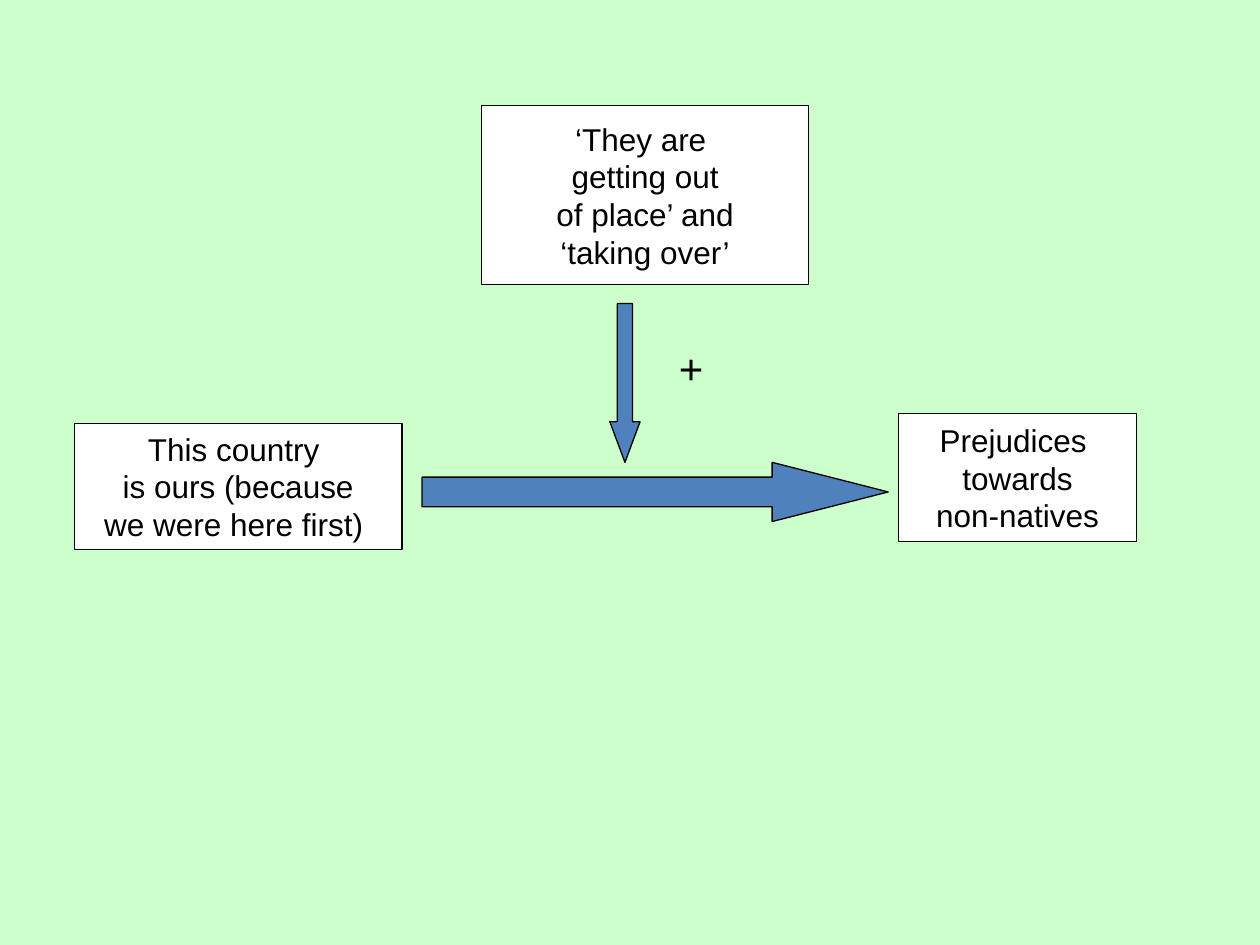
from dataclasses import dataclass

from pptx import Presentation
from pptx import util as u
from pptx.dml.color import RGBColor
from pptx.enum import shapes as sh, text as tx

WIDE, HIGH = u.Inches(10), u.Inches(7.5)
HUES = {"back": "CCFFCC", "box": "FFFFFF", "arrow": "4F81BD", "ink": "000000"}


@dataclass
class Area:
    """Place and size in percent of the slide's width and height."""
    left: float
    top: float
    width: float
    height: float

    def emu(self) -> list[int]:
        pairs = ((self.left, WIDE), (self.top, HIGH),
                 (self.width, WIDE), (self.height, HIGH))
        return [round(part * full / 100) for part, full in pairs]


@dataclass
class Box:
    area: Area
    lines: list[str]


@dataclass
class Arrow:
    area: Area
    kind: sh.MSO_SHAPE
    head: float  # head length as a share of the arrow's thickness


BOXES = [
    Box(Area(5.9, 44.8, 26, 13.33),
        ["This country ", "is ours (because", "we were here first) "]),
    Box(Area(71.3, 43.73, 18.9, 13.6),
        ["Prejudices ", "towards", "non-natives"]),
    Box(Area(38.2, 11.2, 26, 18.93),
        ["‘They are ", "getting out", "of place’ and", "‘taking over’"]),
]
ARROWS = [
    Arrow(Area(33.5, 48.93, 37, 6.27), sh.MSO_SHAPE.RIGHT_ARROW, 1.96),
    Arrow(Area(48.4, 32.13, 2.4, 16.8), sh.MSO_SHAPE.DOWN_ARROW, 1.34),
]
PLUS = Area(52.9, 35.6, 4, 6.67)


def hue(name: str) -> RGBColor:
    return RGBColor.from_string(HUES[name])


def write(shape, lines: list[str], size: int = 18,
          align=tx.PP_ALIGN.CENTER, anchor=tx.MSO_ANCHOR.MIDDLE) -> None:
    frame = shape.text_frame
    frame.word_wrap = False
    frame.vertical_anchor = anchor
    frame.text = "\n".join(lines)
    for para in frame.paragraphs:
        para.alignment = align
        font = para.runs[0].font
        font.name, font.size = "Arial", u.Pt(size)
        font.color.rgb = hue("ink")


def draw(slide, kind: sh.MSO_SHAPE, area: Area, fill: str):
    shape = slide.shapes.add_shape(kind, *area.emu())
    shape.shadow.inherit = False
    shape.fill.solid()
    shape.fill.fore_color.rgb = hue(fill)
    shape.line.color.rgb = hue("ink")
    shape.line.width = u.Pt(0.75)
    return shape


def main() -> None:
    deck = Presentation()
    deck.slide_width, deck.slide_height = WIDE, HIGH
    slide = deck.slides.add_slide(deck.slide_layouts[6])
    slide.background.fill.solid()
    slide.background.fill.fore_color.rgb = hue("back")

    # Statements
    for box in BOXES:
        write(draw(slide, sh.MSO_SHAPE.RECTANGLE, box.area, "box"), box.lines)

    # Effects between them
    for arrow in ARROWS:
        shape = draw(slide, arrow.kind, arrow.area, "arrow")
        shape.adjustments[0] = 0.5
        shape.adjustments[1] = arrow.head

    # Sign of the moderating effect
    plus = slide.shapes.add_textbox(*PLUS.emu())
    write(plus, ["+"], size=24, align=tx.PP_ALIGN.LEFT,
          anchor=tx.MSO_ANCHOR.TOP)
    plus.text_frame.auto_size = tx.MSO_AUTO_SIZE.SHAPE_TO_FIT_TEXT

    deck.save("out.pptx")


if __name__ == "__main__":
    main()
